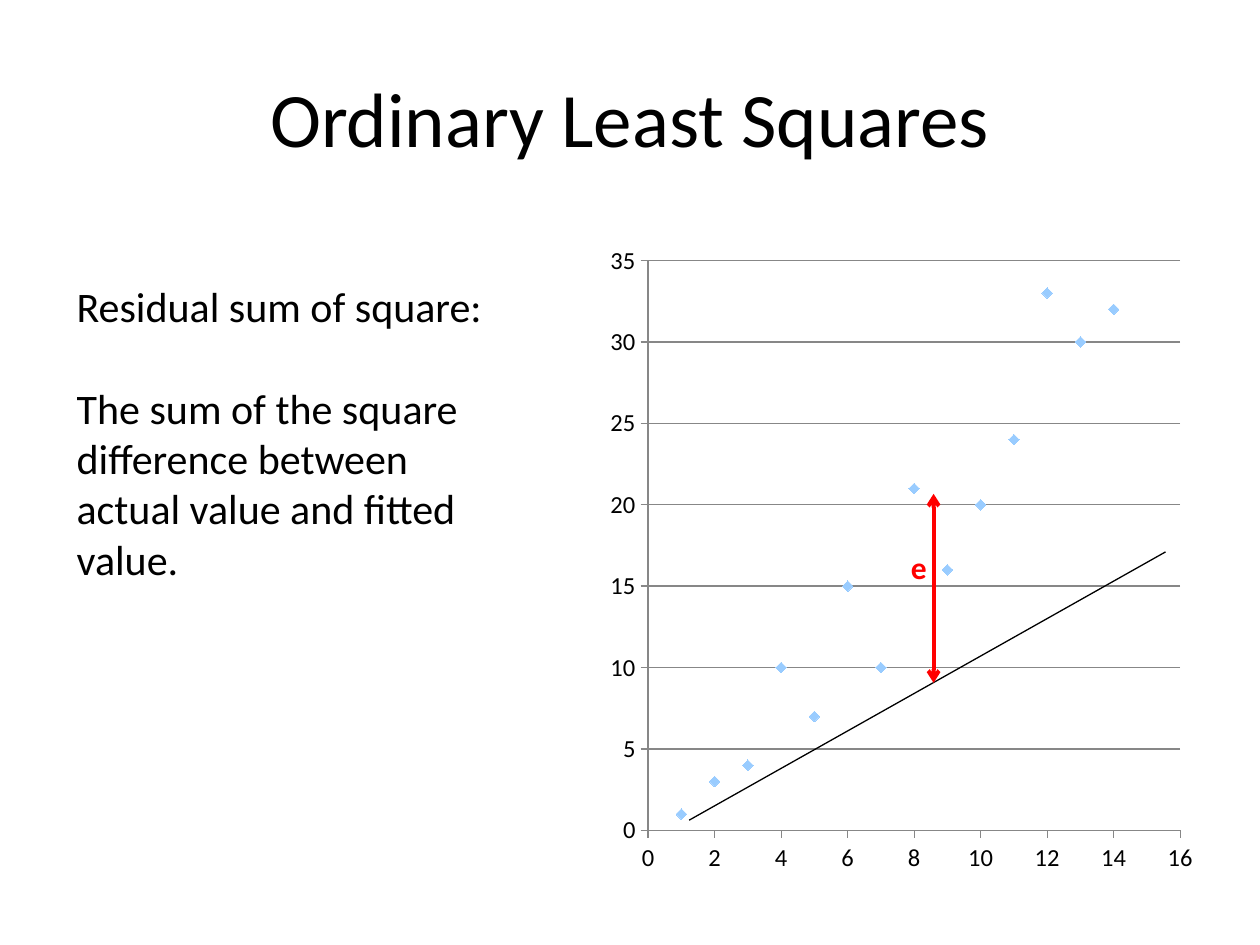
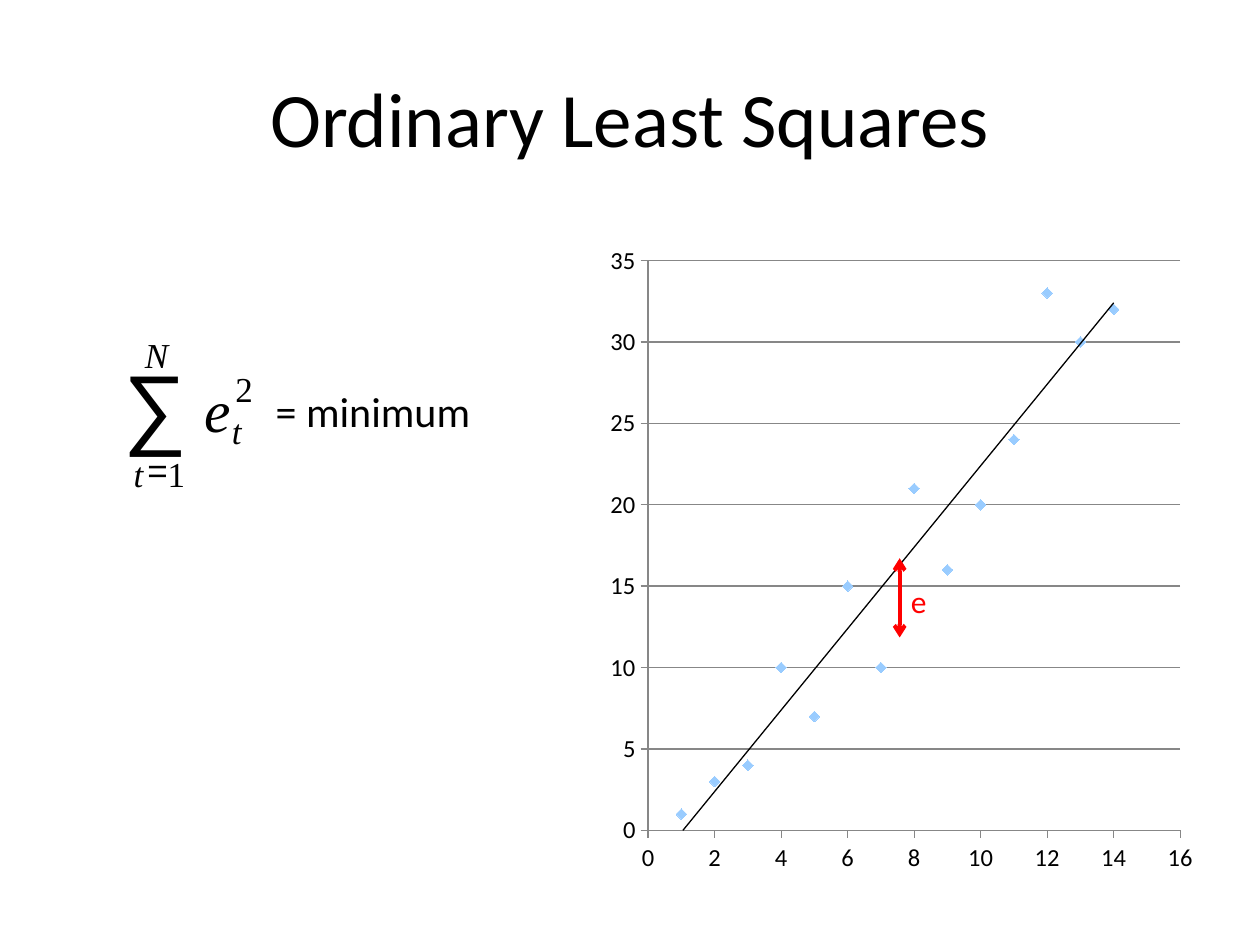
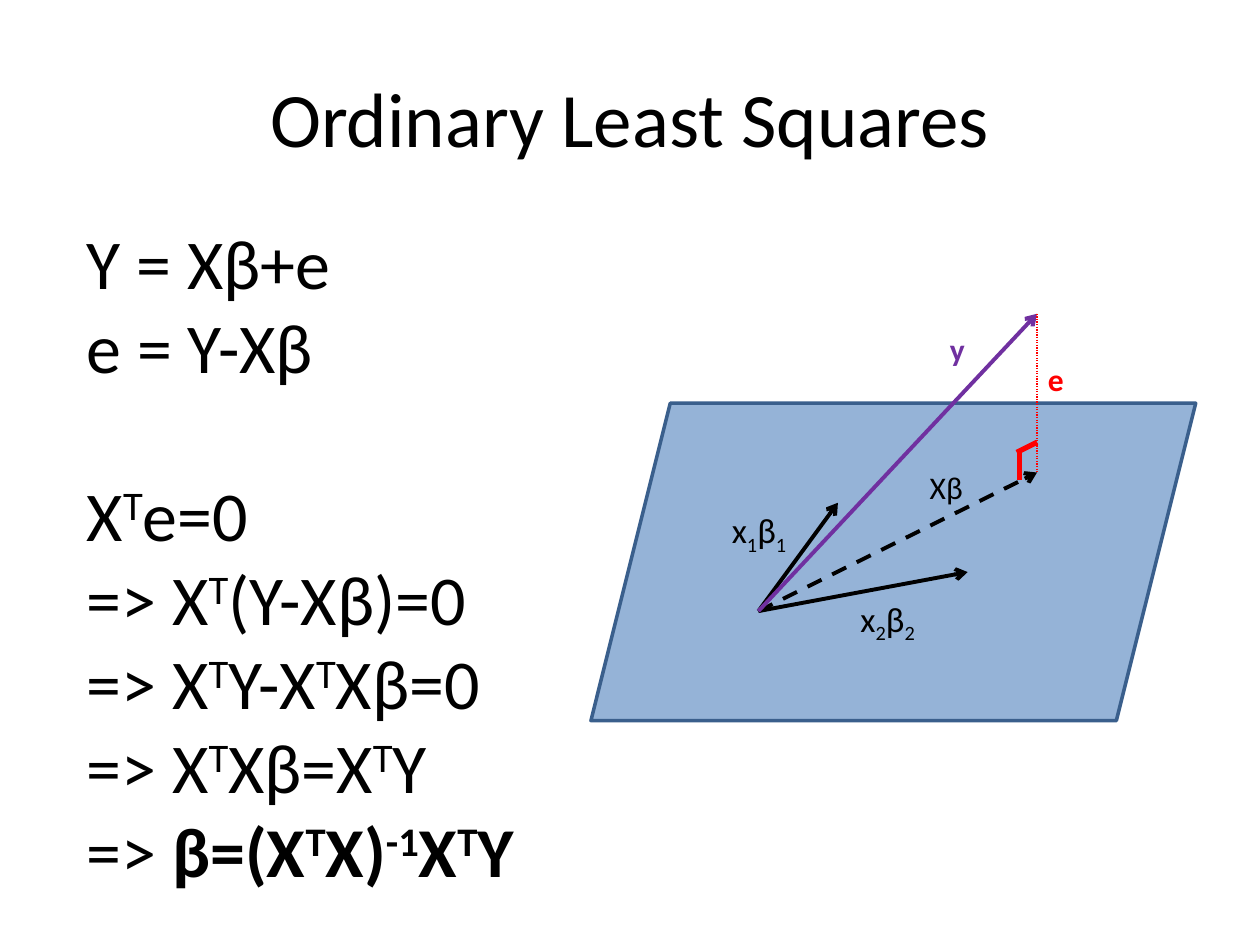
from dataclasses import dataclass

from lxml import etree
from pptx import Presentation
from pptx.chart.data import XyChartData
from pptx.dml.color import RGBColor
from pptx.enum.chart import XL_CHART_TYPE, XL_MARKER_STYLE, XL_TICK_MARK
from pptx.enum.dml import MSO_LINE
from pptx.enum.shapes import MSO_CONNECTOR, MSO_SHAPE
from pptx.enum.text import MSO_ANCHOR, PP_ALIGN
from pptx.oxml.ns import qn
from pptx.util import Pt

SCATTER = XL_CHART_TYPE.XY_SCATTER
DIAMOND = XL_MARKER_STYLE.DIAMOND
CROSS, NO_TICK = XL_TICK_MARK.OUTSIDE, XL_TICK_MARK.NONE
DASH, DOTS = MSO_LINE.DASH, MSO_LINE.ROUND_DOT
STRAIGHT = MSO_CONNECTOR.STRAIGHT
PARALLELOGRAM = MSO_SHAPE.PARALLELOGRAM
LEFT, CENTER = PP_ALIGN.LEFT, PP_ALIGN.CENTER
TOP, MIDDLE = MSO_ANCHOR.TOP, MSO_ANCHOR.MIDDLE


@dataclass(frozen=True)
class Theme:
    font: str = "Calibri"
    symbol_font: str = "Arial"
    math_font: str = "Times New Roman"
    black: str = "000000"
    red: str = "FF0000"
    purple: str = "7030A0"
    plane: str = "95B3D7"
    plane_edge: str = "3A5F8C"
    marker: str = "99CCFF"
    grid: str = "878787"
    title: int = 44
    equation: int = 40
    body: int = 24
    vector: int = 20
    label: int = 18
    axis: int = 14
    thin: float = 0.75
    arrow: float = 2.25
    corner: float = 3


THEME = Theme()
SLIDE_SIZE = (720, 540)
TITLE = "Ordinary Least Squares"
TITLE_BOX = (36, 21.6, 648, 90)

CHART_BOX = (342.7, 133.9, 345.6, 374.4)
PLOT_LAYOUT = {"x": 0.08, "y": 0.04, "w": 0.88, "h": 0.87}
OBSERVED = [1, 3, 4, 10, 7, 15, 10, 21, 16, 20, 24, 33, 30, 32]

RESIDUAL_TEXT = [
    ["Residual sum of square:"],
    ["The sum of the square difference between actual value and fitted value."],
]
RESIDUAL_BOX = (36.7, 157, 260.6, 181.4)

SYMBOL = {"size": 51, "font": THEME.symbol_font}
SIGN = {"size": 20, "font": THEME.symbol_font}
DIGIT = {"size": 20, "font": THEME.math_font}
INDEX = {**DIGIT, "italic": True}
VARIABLE = {**INDEX, "size": 34}
FORMULA = [
    ("∑", (70.6, 199.4, 36.7, 61.2), SYMBOL),
    ("=", (84.2, 256.3, 10.8, 23.8), SIGN),
    ("N", (82.8, 190.8, 13.7, 23.8), INDEX),
    ("t", (76.3, 258.5, 5.8, 23.8), INDEX),
    ("t", (132.5, 234, 5.8, 23.8), INDEX),
    ("e", (116.6, 213.1, 15.1, 41), VARIABLE),
    ("1", (95.8, 258.5, 10.1, 23.8), DIGIT),
    ("2", (134.6, 210.2, 10.1, 23.8), DIGIT),
]
MINIMUM_BOX = (150.5, 216.7, 141.8, 36)

SUPER, SUB = 30, -25
T = ("T", SUPER)
BOLD_T = ("T", SUPER, True)
EQUATIONS = [
    ["Y = Xβ+e"],
    ["e = Y-Xβ"],
    ["X", T, "e=0"],
    ["=> X", T, "(Y-Xβ)=0"],
    ["=> X", T, "Y-X", T, "Xβ=0"],
    ["=> X", T, "Xβ=X", T, "Y"],
    ["=> ", ("β=(X", 0, True), BOLD_T, ("X)", 0, True), ("-1", SUPER, True),
     ("X", 0, True), BOLD_T, ("Y", 0, True)],
]
EQUATIONS_BOX = (42.5, 121.7, 510.5, 395.3)

PLANE_BOX = (337.7, 230.4, 345.6, 181.4)
ORIGIN = (433.4, 349.2)
FITTED_TIP = (592.6, 270)
Y_TIP = (592.6, 179.3)
VECTORS = [
    ((478.8, 287.3), THEME.black, None),
    ((553, 326.9), THEME.black, None),
    (FITTED_TIP, THEME.black, DASH),
    (Y_TIP, THEME.purple, None),
]
VECTOR_LABELS = [("1", (411.1, 287.3, 62.6, 31.7)), ("2", (484.6, 337.7, 62.6, 31.7))]
POINT_LABELS = [
    ("y", (535.7, 185, 23, 28.8), THEME.purple, True),
    ("e", (591.8, 202.3, 23.8, 28.8), THEME.red, True),
    ("Xβ", (524.2, 264.2, 33.8, 28.8), THEME.black, False),
]
RIGHT_ANGLE = [((581, 258.5), (592.6, 252.7)), ((582.5, 257.8), (582.5, 274.3))]


def points(values):
    return [Pt(value) for value in values]


def color(value):
    return RGBColor.from_string(value)


def write_text(frame, paragraphs, size=THEME.body, font=THEME.font, fill=THEME.black,
               bold=False, italic=False, align=LEFT, anchor=TOP, wrap=True,
               inset=True, gap_before=None, gap=0):
    frame.word_wrap = wrap
    frame.vertical_anchor = anchor
    if not inset:
        frame.margin_left = frame.margin_right = frame.margin_top = frame.margin_bottom = 0
    for index, parts in enumerate(paragraphs):
        paragraph = frame.add_paragraph() if index else frame.paragraphs[0]
        paragraph.alignment = align
        if index == gap_before:
            paragraph.space_before = Pt(gap)
        for part in parts:
            content, baseline, strong = (*part, bold)[:3] if isinstance(part, tuple) else (part, 0, bold)
            run = paragraph.add_run()
            run.text = content
            run.font.size = Pt(size)
            run.font.name = font
            run.font.bold = strong
            run.font.italic = italic
            run.font.color.rgb = color(fill)
            if baseline:
                run.font._element.set("baseline", str(baseline * 1000))


def add_text(slide, box, paragraphs, **formatting):
    shape = slide.shapes.add_textbox(*points(box))
    write_text(shape.text_frame, paragraphs, **formatting)


def add_line(slide, start, end, fill=THEME.black, width=THEME.thin, dash=None, arrows=()):
    connector = slide.shapes.add_connector(STRAIGHT, *points(start + end))
    connector.line.color.rgb = color(fill)
    connector.line.width = Pt(width)
    if dash is not None:
        connector.line.dash_style = dash
    properties = connector._element.spPr
    outline = properties.find(qn("a:ln"))
    for arrow in arrows:
        etree.SubElement(outline, qn(f"a:{arrow}End"), type="arrow")
    etree.SubElement(properties, qn("a:effectLst"))


def add_titled_slide(presentation):
    slide = presentation.slides.add_slide(presentation.slide_layouts[5])
    title = slide.shapes.title
    title.left, title.top, title.width, title.height = points(TITLE_BOX)
    write_text(title.text_frame, [[TITLE]], size=THEME.title, align=CENTER, anchor=MIDDLE)
    return slide


def set_plot_layout(chart):
    plot_area = chart._chartSpace.find(".//" + qn("c:plotArea"))
    for existing in plot_area.findall(qn("c:layout")):
        plot_area.remove(existing)
    layout = etree.Element(qn("c:layout"))
    plot_area.insert(0, layout)
    manual = etree.SubElement(layout, qn("c:manualLayout"))
    settings = {"layoutTarget": "inner", "xMode": "edge", "yMode": "edge", **PLOT_LAYOUT}
    for name, value in settings.items():
        etree.SubElement(manual, qn(f"c:{name}"), val=str(value))


def add_trend_line(series):
    trend = etree.Element(qn("c:trendline"))
    properties = etree.SubElement(trend, qn("c:spPr"))
    outline = etree.SubElement(properties, qn("a:ln"), w=str(Pt(THEME.thin)))
    fill = etree.SubElement(outline, qn("a:solidFill"))
    etree.SubElement(fill, qn("a:srgbClr"), val=THEME.black)
    for name, value in (("trendlineType", "linear"), ("dispRSqr", "0"), ("dispEq", "0")):
        etree.SubElement(trend, qn(f"c:{name}"), val=value)
    series._element.find(qn("c:xVal")).addprevious(trend)


def add_scatter(slide, trend=False):
    data = XyChartData()
    observations = data.add_series("Series 1")
    for x, y in enumerate(OBSERVED, start=1):
        observations.add_data_point(x, y)
    chart = slide.shapes.add_chart(SCATTER, *points(CHART_BOX), data).chart
    chart.has_legend = chart.has_title = False
    chart.font.name = THEME.font
    chart.font.size = Pt(THEME.axis)
    chart.font.color.rgb = color(THEME.black)
    for axis, maximum, step in ((chart.category_axis, 16, 2), (chart.value_axis, 35, 5)):
        axis.minimum_scale, axis.maximum_scale, axis.major_unit = 0, maximum, step
        axis.major_tick_mark, axis.minor_tick_mark = CROSS, NO_TICK
        axis.has_major_gridlines = axis is chart.value_axis
        axis.format.line.color.rgb = color(THEME.grid)
        axis.format.line.width = Pt(THEME.thin)
    chart.value_axis.has_major_gridlines = True
    grid_line = chart.value_axis.major_gridlines.format.line
    grid_line.color.rgb = color(THEME.grid)
    grid_line.width = Pt(THEME.thin)
    chart.plots[0].vary_by_categories = False
    series = chart.plots[0].series[0]
    series.smooth = False
    series.format.line.fill.background()
    series.marker.style = DIAMOND
    series.marker.size = 6
    series.marker.format.fill.solid()
    series.marker.format.fill.fore_color.rgb = color(THEME.marker)
    series.marker.format.line.fill.background()
    set_plot_layout(chart)
    if trend:
        add_trend_line(series)


def add_residual(slide, x, top, bottom, label_top, bold):
    add_line(slide, (x, top), (x, bottom), fill=THEME.red, width=THEME.arrow,
             arrows=("head", "tail"))
    add_text(slide, (513.4, label_top, 23.8, 28.8), [["e"]], size=THEME.label,
             fill=THEME.red, bold=bold, wrap=False)


def build_residual_slide(presentation):
    slide = add_titled_slide(presentation)
    add_scatter(slide)
    add_line(slide, (393.8, 468.7), (666, 315.4))
    add_text(slide, RESIDUAL_BOX, RESIDUAL_TEXT, gap_before=1, gap=29)
    add_residual(slide, 533.5, 282.2, 390.2, 309.6, True)


def build_minimum_slide(presentation):
    slide = add_titled_slide(presentation)
    add_scatter(slide, trend=True)
    add_residual(slide, 514.1, 319, 364.3, 329, False)
    for symbol, box, formatting in FORMULA:
        add_text(slide, box, [[symbol]], wrap=False, inset=False, **formatting)
    add_text(slide, MINIMUM_BOX, [["= minimum"]])


def build_projection_slide(presentation):
    slide = add_titled_slide(presentation)
    plane = slide.shapes.add_shape(PARALLELOGRAM, *points(PLANE_BOX))
    plane.shadow.inherit = False
    plane.fill.solid()
    plane.fill.fore_color.rgb = color(THEME.plane)
    plane.line.color.rgb = color(THEME.plane_edge)
    plane.line.width = Pt(2)
    for tip, fill, dash in VECTORS:
        add_line(slide, ORIGIN, tip, fill=fill, width=THEME.arrow, dash=dash, arrows=("tail",))
    add_line(slide, Y_TIP, FITTED_TIP, fill=THEME.red, dash=DOTS)
    for number, box in VECTOR_LABELS:
        add_text(slide, box, [["x", (number, SUB), "β", (number, SUB)]], size=THEME.vector)
    for label, box, fill, bold in POINT_LABELS:
        add_text(slide, box, [[label]], size=THEME.label, fill=fill, bold=bold, wrap=False)
    add_text(slide, EQUATIONS_BOX, EQUATIONS, size=THEME.equation, gap_before=2, gap=48)
    for start, end in RIGHT_ANGLE:
        add_line(slide, start, end, fill=THEME.red, width=THEME.corner)


def main():
    presentation = Presentation()
    presentation.slide_width, presentation.slide_height = points(SLIDE_SIZE)
    build_residual_slide(presentation)
    build_minimum_slide(presentation)
    build_projection_slide(presentation)
    presentation.save("out.pptx")


if __name__ == "__main__":
    main()
